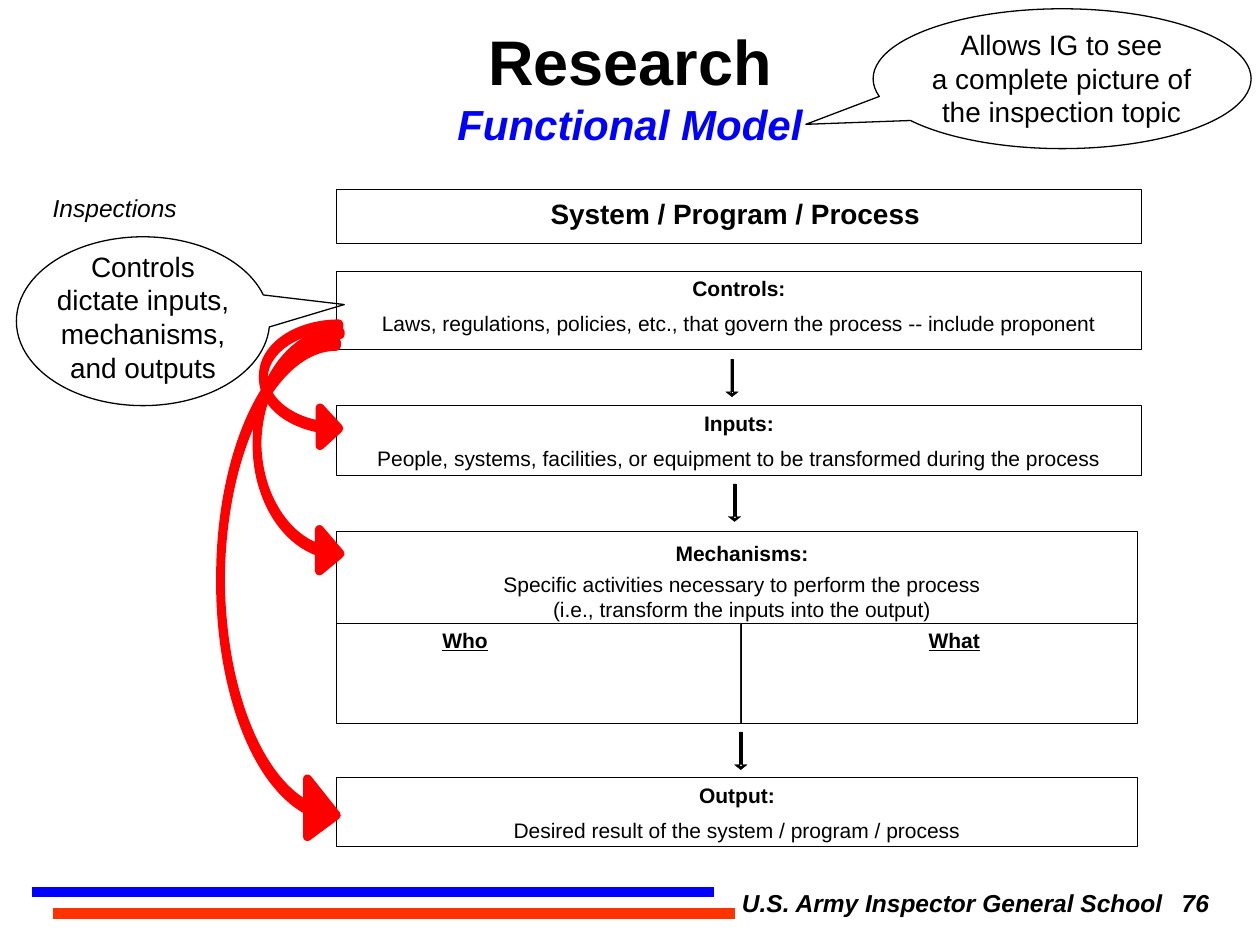
from dataclasses import dataclass

from lxml import etree
from pptx import Presentation
from pptx.dml.color import RGBColor
from pptx.enum.shapes import MSO_CONNECTOR, MSO_SHAPE
from pptx.enum.text import MSO_ANCHOR, MSO_AUTO_SIZE, PP_ALIGN
from pptx.oxml.ns import qn
from pptx.util import Inches, Pt

RECT = MSO_SHAPE.RECTANGLE
CALLOUT = MSO_SHAPE.OVAL_CALLOUT
CURVED_ARROW = MSO_SHAPE.CURVED_RIGHT_ARROW
STRAIGHT = MSO_CONNECTOR.STRAIGHT
LEFT, CENTER = PP_ALIGN.LEFT, PP_ALIGN.CENTER
TOP, BOTTOM = MSO_ANCHOR.TOP, MSO_ANCHOR.BOTTOM
FIXED_SIZE = MSO_AUTO_SIZE.NONE


@dataclass(frozen=True)
class Theme:
    font: str = "Arial"
    black: RGBColor = RGBColor(0, 0, 0)
    white: RGBColor = RGBColor(255, 255, 255)
    blue: RGBColor = RGBColor(0, 0, 255)
    red: RGBColor = RGBColor(255, 0, 0)
    orange: RGBColor = RGBColor(255, 51, 0)

    def text_format(self, role):
        formats = {
            "title": dict(size=Pt(36), bold=True, italic=False),
            "subtitle": dict(size=Pt(24), bold=True, italic=True),
            "banner": dict(size=Pt(16), bold=True),
            "heading": dict(size=Pt(12), bold=True),
            "column": dict(size=Pt(12), bold=True, underline=True),
            "body": dict(size=Pt(12), bold=False),
            "remark": dict(size=Pt(16)),
            "topic": dict(size=Pt(14), italic=True),
            "footer": dict(size=Pt(14), bold=True, italic=True),
        }
        return {"name": self.font, **formats[role]}

    def text_color(self, role):
        return self.blue if role == "subtitle" else self.black


class SlideBuilder:
    def __init__(self, slide, theme):
        self.shapes = slide.shapes
        self.theme = theme

    def set_text(self, frame, lines, align=CENTER, anchor=TOP, gap=0, wrap=True, **margins):
        """Fill a frame with (text, role) lines; gap is the space above the second one."""
        settings = dict(word_wrap=wrap, vertical_anchor=anchor,
                        auto_size=FIXED_SIZE, **margins)
        for name, value in settings.items():
            setattr(frame, name, value)
        for index, (text, role) in enumerate(lines):
            paragraph = frame.paragraphs[0] if index == 0 else frame.add_paragraph()
            paragraph.alignment = align
            if index == 1 and gap:
                paragraph.space_before = Pt(gap)
            run = paragraph.add_run()
            run.text = text
            for name, value in self.theme.text_format(role).items():
                setattr(run.font, name, value)
            run.font.color.rgb = self.theme.text_color(role)

    def title(self, left, top, width, height, lines):
        holder = self.shapes.title
        bounds = dict(left=left, top=top, width=width, height=height)
        for name, value in bounds.items():
            setattr(holder, name, Inches(value))
        self.set_text(holder.text_frame, lines, anchor=BOTTOM, wrap=False)

    def text(self, left, top, width, height, lines, align=CENTER):
        label = self.shapes.add_textbox(*map(Inches, (left, top, width, height)))
        self.set_text(label.text_frame, lines, align)
        return label

    def paint(self, shape, fill, line, weight):
        shape.shadow.inherit = False
        if fill is None:
            shape.fill.background()
        else:
            shape.fill.solid()
            shape.fill.fore_color.rgb = fill
        shape.line.color.rgb = line
        shape.line.width = Pt(weight)

    def preset(self, kind, bounds, fill, line, weight, adjustments=()):
        shape = self.shapes.add_shape(kind, *map(Inches, bounds))
        self.paint(shape, fill, line, weight)
        for index, value in enumerate(adjustments):
            shape.adjustments[index] = value
        return shape

    def box(self, bounds, lines, pad_top=0.04, pad_left=0.1, pad_right=0.1,
            align=CENTER, gap=5.5):
        box = self.preset(RECT, bounds, self.theme.white, self.theme.black, 0.38)
        self.set_text(box.text_frame, lines, align, gap=gap, margin_top=Inches(pad_top),
                      margin_left=Inches(pad_left), margin_right=Inches(pad_right),
                      margin_bottom=0)

    def callout(self, bounds, tail):
        self.preset(CALLOUT, bounds, None, self.theme.black, 0.75, tail)

    def control_arrow(self, *bounds):
        red = self.theme.red
        self.preset(CURVED_ARROW, bounds, red, red, 5, (0.043, 0.5, 0.25))

    def step_arrow(self, center, top):
        """Thin shaft with a small head, pointing down."""
        half_shaft, half_head, neck, length = 0.01, 0.05, 0.26, 0.3

        def points(*offsets):
            return [(Inches(center + x), Inches(top + y)) for x, y in offsets]

        shaft = points((-half_shaft, 0), (half_shaft, 0),
                       (half_shaft, neck + 0.01), (-half_shaft, neck + 0.01))
        head = points((-half_head, neck), (half_head, neck), (0, length))
        outline = self.shapes.build_freeform(*shaft[0])
        outline.add_line_segments(shaft[1:], close=True)
        outline.move_to(*head[0])
        outline.add_line_segments(head[1:], close=True)
        self.paint(outline.convert_to_shape(), self.theme.black, self.theme.black, 0.13)

    def rule(self, left, right, y, color):
        rule = self.shapes.add_connector(STRAIGHT, *map(Inches, (left, y, right, y)))
        rule.line.color.rgb = color
        rule.line.width = Pt(6)
        etree.SubElement(rule._element.spPr, qn("a:effectLst"))


def add_tab_stop(paragraph, position):
    properties = paragraph._p.get_or_add_pPr()
    stops = etree.SubElement(properties, qn("a:tabLst"))
    etree.SubElement(stops, qn("a:tab"), pos=str(Inches(position)), algn="l")


def build_frame(page, theme):
    page.rule(0.25, 5.67, 7.08, theme.blue)
    page.rule(0.42, 5.83, 7.25, theme.orange)
    page.text(0.32, 1.48, 1.26, 0.5, [("Inspections", "topic")], LEFT)
    footer = page.text(5.79, 7, 4.21, 0.5,
                       [("U.S. Army Inspector General School\t76", "footer")], LEFT)
    add_tab_stop(footer.text_frame.paragraphs[0], 3.49)
    page.title(3.47, 0.12, 3.06, 1.11,
               [("Research", "title"), ("Functional Model", "subtitle")])


def build_model(page):
    left, wide, narrow, middle = 2.67, 6.39, 6.36, 5.88
    page.box((left, 1.5, wide, 0.43), [("System / Program / Process", "banner")],
             pad_top=0.06, pad_left=0.07, pad_right=0.13)
    stages = [
        (2.15, wide, 0.62, "Controls:",
         "Laws, regulations, policies, etc., that govern the process -- include proponent"),
        (3.22, wide, 0.55, "Inputs:",
         "People, systems, facilities, or equipment to be transformed during the process"),
        (6.17, narrow, 0.55, "Output:",
         "Desired result of the system / program / process"),
    ]
    for top, width, height, heading, body in stages:
        page.box((left, top, width, height), [(heading, "heading"), (body, "body")])

    page.box((left, 4.22, narrow, 1.32),
             [("Mechanisms:", "heading"),
              ("Specific activities necessary to perform the process", "body"),
              ("(i.e., transform the inputs into the output)", "body")],
             pad_top=0.07, pad_left=0.14, pad_right=0.06, gap=3)
    columns = [(left, middle, "Who", 0.84), (middle, left + narrow, "What", 1.49)]
    for start, end, heading, indent in columns:
        page.box((start, 4.95, end - start, 0.79), [(heading, "column")],
                 pad_top=0.03, pad_left=indent, align=LEFT)

    for center, top in ((5.81, 2.85), (5.83, 3.84), (5.88, 5.81)):
        page.step_arrow(center, top)


def build_remarks(page):
    page.control_arrow(2.09, 2.57, 0.6, 0.98)
    page.control_arrow(2.04, 2.63, 0.66, 1.93)
    page.control_arrow(1.75, 2.71, 0.92, 3.99)
    page.callout((0.13, 1.88, 2.01, 1.34), (0.795, -0.099))
    page.text(-0.11, 1.93, 2.49, 1.18,
              [("Controls", "remark"), ("dictate inputs, mechanisms,", "remark"),
               ("and outputs", "remark")])
    page.callout((6.93, 0.07, 3, 1.11), (-0.678, 0.326))
    page.text(7.17, 0.17, 2.51, 0.91,
              [("Allows IG to see", "remark"),
               ("a complete picture of the inspection topic", "remark")])


def main():
    deck = Presentation()
    deck.slide_width, deck.slide_height = Inches(10), Inches(7.5)
    theme = Theme()
    page = SlideBuilder(deck.slides.add_slide(deck.slide_layouts[5]), theme)
    build_frame(page, theme)
    build_model(page)
    build_remarks(page)
    deck.save("out.pptx")


if __name__ == "__main__":
    main()
